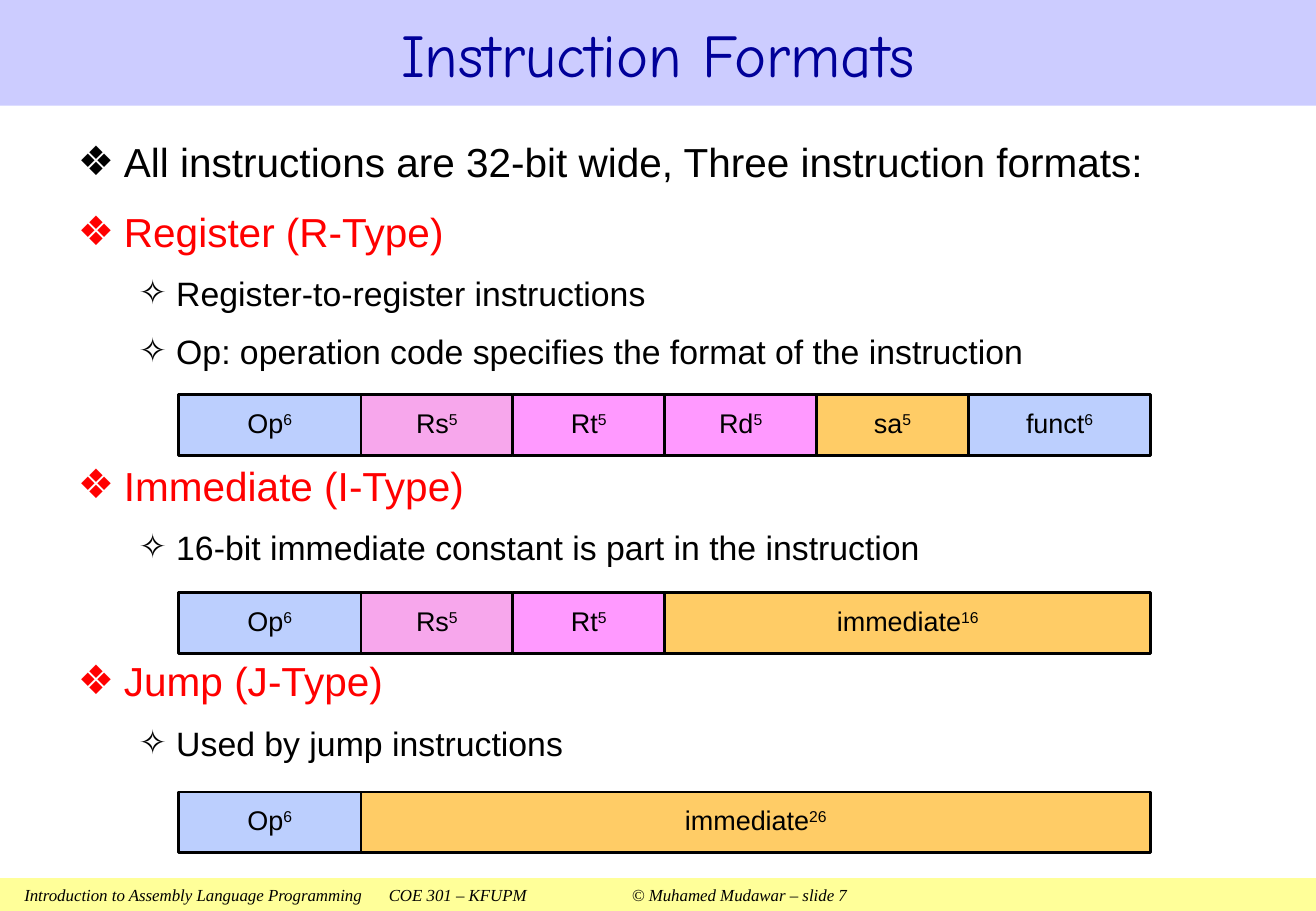
from lxml.etree import SubElement
from pptx import Presentation
from pptx.dml.color import RGBColor
from pptx.enum.shapes import MSO_SHAPE as Shape
from pptx.enum.text import MSO_ANCHOR as Anchor, MSO_AUTO_SIZE as AutoSize, PP_ALIGN as Align
from pptx.oxml.ns import qn
from pptx.util import Emu, Pt

PX = 9144  # 100 px to the inch
WIDTH, HEIGHT = 1083, 750
BIT_WIDTH, FIELD_HEIGHT, FIELD_LEFT = 25, 50, 147

COLORS = {
    "black": "000000", "heading": "FF0000", "title": "000099",
    "title_band": "CCCCFF", "footer_band": "FFFF99",
    "blue": "BCCFFE", "rose": "F7A7EC", "pink": "FF99FF", "amber": "FFCC66",
}

# Bullet level: character, text indent, hanging indent, text size
LEVELS = [("❖", 38, 38, 24), ("✧", 81, 31, 20)]

# Level, colour, space before (tag, value), wording
BEFORE = ("a:spcPct", 40000)
AFTER_FIELDS = ("a:spcPts", 5000)
OUTLINE = [
    (0, "black", BEFORE, "All instructions are 32-bit wide, Three instruction formats:"),
    (0, "heading", BEFORE, "Register (R-Type)"),
    (1, "black", BEFORE, "Register-to-register instructions"),
    (1, "black", BEFORE, "Op: operation code specifies the format of the instruction"),
    (0, "heading", AFTER_FIELDS, "Immediate (I-Type)"),
    (1, "black", BEFORE, "16-bit immediate constant is part in the instruction"),
    (0, "heading", AFTER_FIELDS, "Jump (J-Type)"),
    (1, "black", BEFORE, "Used by jump instructions"),
]

# Top of each format and its fields: name, bits, colour
OP, RS, RT = ("Op", 6, "blue"), ("Rs", 5, "rose"), ("Rt", 5, "pink")
FORMATS = [
    (325, [OP, RS, RT, ("Rd", 5, "pink"), ("sa", 5, "amber"), ("funct", 6, "blue")]),
    (488, [OP, RS, RT, ("immediate", 16, "amber")]),
    (652, [OP, ("immediate", 26, "amber")]),
]


def px(length):
    return Emu(length * PX)


def rgb(name):
    return RGBColor.from_string(COLORS[name])


class FormatSlide:
    def __init__(self, prs):
        self.slide = prs.slides.add_slide(prs.slide_layouts[1])

    def place(self, shape, left, top, width, height):
        shape.left, shape.top = px(left), px(top)
        shape.width, shape.height = px(width), px(height)

    def run(self, paragraph, text, size, color="black", font="Arial", italic=False):
        run = paragraph.add_run()
        run.text = text
        run.font.size, run.font.name, run.font.italic = Pt(size), font, italic
        run.font.color.rgb = rgb(color)
        return run

    def rect(self, shapes, left, top, width, height, color, insets):
        box = shapes.add_shape(Shape.RECTANGLE, px(left), px(top), px(width), px(height))
        box.shadow.inherit = False
        box.fill.solid()
        box.fill.fore_color.rgb = rgb(color)
        frame = box.text_frame
        frame.margin_left, frame.margin_top, frame.margin_right, frame.margin_bottom = map(px, insets)
        frame.vertical_anchor = Anchor.MIDDLE
        frame.word_wrap = True
        return box

    def title(self, text):
        title = self.slide.shapes.title
        self.place(title, 0, 0, WIDTH, 87)
        title.fill.solid()
        title.fill.fore_color.rgb = rgb("title_band")
        title.text_frame.vertical_anchor = Anchor.MIDDLE
        title.text_frame.auto_size = AutoSize.NONE
        paragraph = title.text_frame.paragraphs[0]
        paragraph.alignment = Align.CENTER
        self.run(paragraph, text, 36, "title", "Comic Neue")

    def outline(self, items):
        body = self.slide.placeholders[1]
        self.place(body, 54, 104, 975, 605)
        frame = body.text_frame
        frame.auto_size = AutoSize.NONE
        frame.vertical_anchor = Anchor.TOP
        for index, (level, color, (space_tag, space), text) in enumerate(items):
            paragraph = frame.add_paragraph() if index else frame.paragraphs[0]
            bullet, indent, hanging, size = LEVELS[level]
            paragraph.level = level
            paragraph.line_spacing = 1.1
            props = paragraph._p.get_or_add_pPr()
            props.set("marL", str(px(indent)))
            props.set("indent", str(-px(hanging)))
            before = SubElement(props, qn("a:spcBef"))
            SubElement(before, qn(space_tag), val=str(space))
            SubElement(props, qn("a:buFont"), typeface="Arial")
            SubElement(props, qn("a:buChar"), char=bullet)
            self.run(paragraph, text, size, color)

    def field_row(self, top, fields):
        shapes = self.slide.shapes.add_group_shape().shapes
        left = FIELD_LEFT
        for name, bits, color in fields:
            width = bits * BIT_WIDTH
            field = self.rect(shapes, left, top, width, FIELD_HEIGHT, color, (0, 10, 0, 10))
            field.line.color.rgb = rgb("black")
            field.line.width = Pt(1.5)
            paragraph = field.text_frame.paragraphs[0]
            paragraph.alignment = Align.CENTER
            paragraph.line_spacing = 0.85
            self.run(paragraph, name, 16)
            exponent = self.run(paragraph, str(bits), 16)
            exponent._r.get_or_add_rPr().set("baseline", "30000")
            left += width

    def footer(self, text, tab_stops):
        band = self.rect(self.slide.shapes, 0, 723, WIDTH, 27, "footer_band", (20, 5, 10, 5))
        band.line.fill.background()
        paragraph = band.text_frame.paragraphs[0]
        paragraph.alignment = Align.LEFT
        tabs = SubElement(paragraph._p.get_or_add_pPr(), qn("a:tabLst"))
        for stop in tab_stops:
            SubElement(tabs, qn("a:tab"), pos=str(px(stop)), algn="l")
        self.run(paragraph, text, 10, font="Times New Roman", italic=True)


def main():
    prs = Presentation()
    prs.slide_width, prs.slide_height = px(WIDTH), px(HEIGHT)
    page = FormatSlide(prs)

    # Title and outline
    page.title("Instruction Formats")
    page.outline(OUTLINE)

    # Bit fields of each format
    for top, fields in FORMATS:
        page.field_row(top, fields)

    # Footer
    page.footer(
        "Introduction to Assembly Language Programming\tCOE 301 – KFUPM\t© Muhamed Mudawar – slide 7",
        (300, 500),
    )
    prs.save("out.pptx")


if __name__ == "__main__":
    main()
